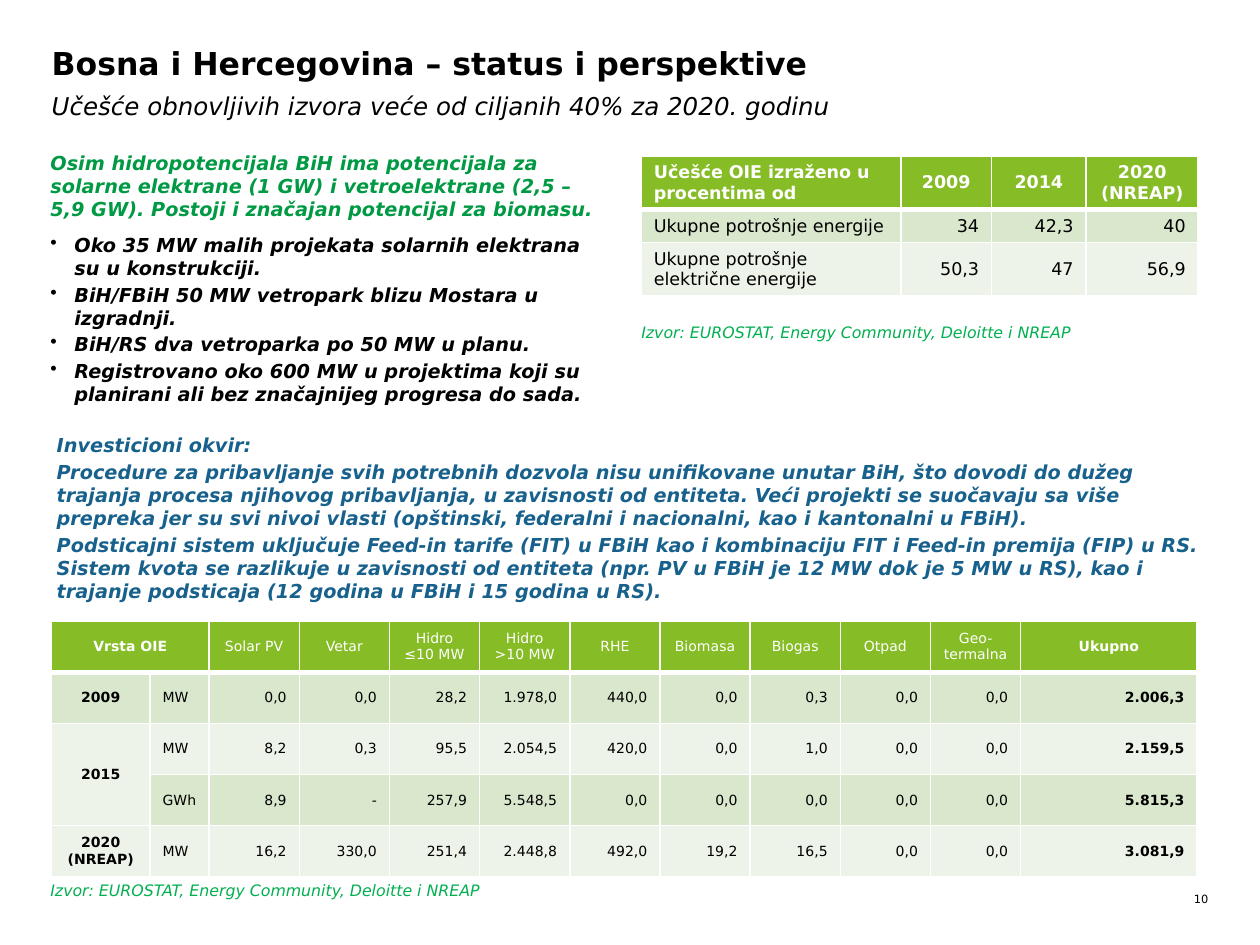
from pptx import Presentation
from pptx.dml.color import RGBColor
from pptx.enum.text import MSO_ANCHOR, MSO_AUTO_SIZE, PP_ALIGN
from pptx.oxml import parse_xml
from pptx.oxml.ns import nsdecls
from pptx.util import Inches, Pt

BLACK = RGBColor(0x00, 0x00, 0x00)
WHITE = RGBColor(0xFF, 0xFF, 0xFF)
LIME = RGBColor(0x86, 0xBC, 0x25)
MINT = RGBColor(0xD9, 0xE7, 0xCD)
PALE = RGBColor(0xED, 0xF3, 0xE8)
GREEN = RGBColor(0x00, 0x9A, 0x44)
LEAF = RGBColor(0x00, 0xB0, 0x50)
BLUE = RGBColor(0x17, 0x61, 0x8C)
LEFT, MID, RIGHT = PP_ALIGN.LEFT, PP_ALIGN.CENTER, PP_ALIGN.RIGHT

SOURCE = "Izvor: EUROSTAT, Energy Community, Deloitte i NREAP"
POINTS = [
    "Oko 35 MW malih projekata solarnih elektrana su u konstrukciji.",
    "BiH/FBiH 50 MW vetropark blizu Mostara u izgradnji.",
    "BiH/RS dva vetroparka po 50 MW u planu.",
    "Registrovano oko 600 MW u projektima koji su planirani ali bez značajnijeg progresa do sada.",
]
FRAME = [
    "Investicioni okvir:",
    "Procedure za pribavljanje svih potrebnih dozvola nisu unifikovane unutar BiH, što dovodi do "
    "dužeg trajanja procesa njihovog pribavljanja, u zavisnosti od entiteta. Veći projekti se "
    "suočavaju sa više prepreka jer su svi nivoi vlasti (opštinski, federalni i nacionalni, kao i "
    "kantonalni u FBiH).",
    "Podsticajni sistem uključuje Feed-in tarife (FIT) u FBiH kao i kombinaciju FIT i Feed-in "
    "premija (FIP) u RS. Sistem kvota se razlikuje u zavisnosti od entiteta (npr. PV u FBiH je "
    "12 MW dok je 5 MW u RS), kao i trajanje podsticaja (12 godina u FBiH i 15 godina u RS).",
]
SHARES = [
    ["Učešće OIE izraženo u procentima od", "2009", "2014", "2020 (NREAP)"],
    ["Ukupne potrošnje energije", "34", "42,3", "40"],
    ["Ukupne potrošnje električne energije", "50,3", "47", "56,9"],
]
POWER = [
    ["Vrsta OIE", "", "Solar PV", "Vetar", "Hidro\n≤10 MW", "Hidro\n>10 MW", "RHE",
     "Biomasa", "Biogas", "Otpad", "Geo-termalna", "Ukupno"],
    ["2009", "MW", "0,0", "0,0", "28,2", "1.978,0", "440,0", "0,0", "0,3", "0,0", "0,0", "2.006,3"],
    ["2015", "MW", "8,2", "0,3", "95,5", "2.054,5", "420,0", "0,0", "1,0", "0,0", "0,0", "2.159,5"],
    ["", "GWh", "8,9", "-", "257,9", "5.548,5", "0,0", "0,0", "0,0", "0,0", "0,0", "5.815,3"],
    ["2020\n(NREAP)", "MW", "16,2", "330,0", "251,4", "2.448,8", "492,0", "19,2", "16,5", "0,0",
     "0,0", "3.081,9"],
]


class Deck:
    """Holds the style and the current slide, on a grid of 100 columns by 75 rows."""

    font = "DejaVu Sans"
    unit = Inches(0.1)

    def __init__(self):
        self.prs = Presentation()
        self.prs.slide_width, self.prs.slide_height = 100 * self.unit, 75 * self.unit
        self.slide = self.prs.slides.add_slide(self.prs.slide_layouts[5])

    def grid(self, *spots):
        return [round(spot * self.unit) for spot in spots]

    def put(self, frame, lines, size, color=BLACK, bold=False, italic=False, align=LEFT,
            bullet=False, gap=0):
        frame.word_wrap = True
        for i, line in enumerate(lines):
            para = frame.add_paragraph() if i else frame.paragraphs[0]
            para.alignment = align
            para.space_before = Pt(gap if i else 0)
            if bullet:
                props = para._p.get_or_add_pPr()
                props.set("marL", str(Inches(0.19)))
                props.set("indent", str(-Inches(0.19)))
                props.append(parse_xml(f'<a:buChar {nsdecls("a")} char="•"/>'))
            run = para.add_run()
            run.text = line
            font = run.font
            font.name, font.size, font.bold, font.italic = self.font, Pt(size), bold, italic
            font.color.rgb = color

    def fit(self, frame):
        frame.margin_left = frame.margin_top = frame.margin_right = frame.margin_bottom = 0
        frame.vertical_anchor = MSO_ANCHOR.TOP
        frame.auto_size = MSO_AUTO_SIZE.NONE
        return frame

    def title(self, spot, line, size):
        shape = self.slide.shapes.title
        shape.left, shape.top, shape.width, shape.height = self.grid(*spot)
        self.put(self.fit(shape.text_frame), [line], size, bold=True)

    def text(self, spot, lines, size, **style):
        box = self.slide.shapes.add_textbox(*self.grid(*spot))
        self.put(self.fit(box.text_frame), lines, size, **style)

    def edge(self, cell, top, base):
        props = cell._tc.get_or_add_tcPr()
        for i, (side, width) in enumerate(zip("LRTB", (1, 1, top, base))):
            props.insert(i, parse_xml(
                f'<a:ln{side} {nsdecls("a")} w="{int(Pt(width))}"><a:solidFill>'
                f'<a:srgbClr val="{WHITE}"/></a:solidFill></a:ln{side}>'))

    def table(self, left, top, cols, rows, data, size, look, spans=()):
        spot = self.grid(left, top, sum(cols), sum(rows))
        table = self.slide.shapes.add_table(len(rows), len(cols), *spot).table
        table.first_row = table.horz_banding = False
        for col, width in zip(table.columns, self.grid(*cols)):
            col.width = width
        for row, height in zip(table.rows, self.grid(*rows)):
            row.height = height
        for start, end in spans:
            table.cell(*start).merge(table.cell(*end))
        for r, line in enumerate(data):
            for c, words in enumerate(line):
                cell = table.cell(r, c)
                cell.vertical_anchor = MSO_ANCHOR.MIDDLE
                cell.fill.solid()
                cell.fill.fore_color.rgb = (PALE, MINT)[r % 2] if r else LIME
                self.edge(cell, 3 if r == 1 else 1, 1 if r else 3)
                if words:
                    align, bold = look(r, c)
                    self.put(cell.text_frame, words.split("\n"), size,
                             color=BLACK if r else WHITE, bold=bold, align=align)

    def save(self):
        self.prs.save("out.pptx")


def share(r, c):
    """Gives alignment and weight in the table of shares."""
    return (LEFT if c == 0 else RIGHT if r else MID), r == 0


def power(r, c):
    """Gives alignment and weight in the table of capacities."""
    align = MID if r == 0 or c == 0 else LEFT if c == 1 else RIGHT
    return align, c in (0, 11)


def main():
    """Builds the slide."""
    deck = Deck()
    deck.title((4.1, 3.5, 91.1, 4), "Bosna i Hercegovina – status i perspektive", 18)
    deck.text((4.1, 7.2, 70, 2.4),
              ["Učešće obnovljivih izvora veće od ciljanih 40% za 2020. godinu"], 14, italic=True)
    deck.text((4, 12, 44.5, 5.6),
              ["Osim hidropotencijala BiH ima potencijala za solarne elektrane (1 GW) i "
               "vetroelektrane (2,5 – 5,9 GW). Postoji i značajan potencijal za biomasu."],
              11, color=GREEN, bold=True, italic=True)
    deck.text((4, 18.5, 42.9, 13.8), POINTS, 11, bold=True, italic=True, bullet=True, gap=2)
    deck.table(50.9, 12.4, [20.6, 7.2, 7.5, 8.9], [4.1, 2.6, 3.4], SHARES, 10, share)
    deck.text((4.5, 34.4, 90.8, 13.5), FRAME, 11, color=BLUE, bold=True, italic=True, gap=2)
    deck.table(4.1, 49.3, [7.8, 4.7] + [7.16] * 9 + [14], [4.06] * 5, POWER, 8, power,
               [((0, 0), (0, 1)), ((2, 0), (3, 0))])
    for left, top in (50.9, 25.6), (4, 69.9):
        deck.text((left, top, 36.7, 1.5), [SOURCE], 9, color=LEAF, italic=True)
    deck.text((93.4, 70.8, 2.5, 1.1), ["10"], 6.5, align=RIGHT)
    deck.save()


if __name__ == "__main__":
    main()
